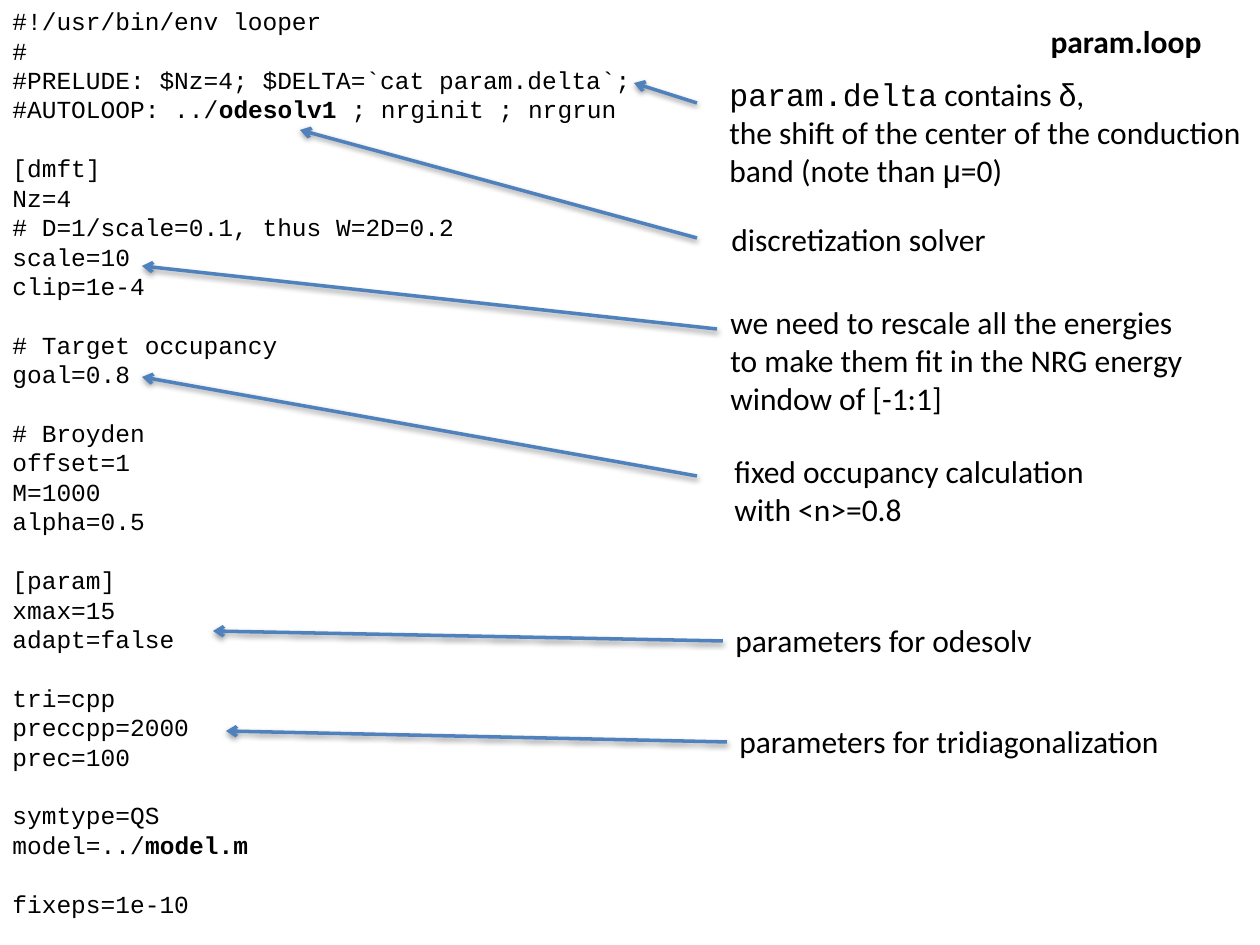
from lxml.etree import SubElement
from pptx import Presentation
from pptx.dml.color import RGBColor
from pptx.enum.shapes import MSO_CONNECTOR as Connector
from pptx.enum.text import MSO_ANCHOR as Anchor, MSO_AUTO_SIZE as AutoSize, PP_ALIGN as Align
from pptx.oxml.ns import qn
from pptx.util import Pt

EMU_PER_PX = 914400 / 126
CODE_FONT, NOTE_FONT, GREEK_FONT = "Courier New", "Calibri", "Arial"
CODE_LINE_PT = 16.8


def px(length):
    return round(length * EMU_PER_PX)


def colour(hex_string):
    return RGBColor.from_string(hex_string)


def write(paragraph, text, font=NOTE_FONT, size=18, bold=False, ink="000000"):
    run = paragraph.add_run()
    run.text = text
    run.font.name, run.font.size, run.font.bold = font, Pt(size), bold
    run.font.color.rgb = colour(ink)


class AnnotatedListing:
    """Style and current slide for code with notes pointing into it."""
    arrow_colour = "4F81BD"
    arrow_width = 2

    def __init__(self, deck):
        self.slide = deck.slides.add_slide(deck.slide_layouts[5])

    def place(self, shape, box):
        shape.left, shape.top, shape.width, shape.height = map(px, box)

    def title(self, text, box):
        heading = self.slide.shapes.title
        self.place(heading, box)
        frame = heading.text_frame
        frame.vertical_anchor = Anchor.TOP
        frame.auto_size = AutoSize.SHAPE_TO_FIT_TEXT
        frame.paragraphs[0].alignment = Align.LEFT
        write(frame.paragraphs[0], text, bold=True)

    def text_box(self, lines, box, wrap=False, **style):
        """Each line is a list of (text, format changes) runs."""
        frame = self.slide.shapes.add_textbox(*map(px, box)).text_frame
        frame.word_wrap = wrap
        frame.auto_size = AutoSize.SHAPE_TO_FIT_TEXT
        for number, runs in enumerate(lines):
            paragraph = frame.add_paragraph() if number else frame.paragraphs[0]
            for text, changes in runs:
                write(paragraph, text, **{**style, **changes})
        return frame

    def code(self, blocks, box):
        """Blocks of lines, set one line apart."""
        lines = [line for block in blocks for line in block]
        frame = self.text_box(lines, box, wrap=True, font=CODE_FONT, size=14)
        first = 0
        for block in blocks[:-1]:
            first += len(block)
            frame.paragraphs[first].space_before = Pt(CODE_LINE_PT)

    def arrow(self, start, end):
        line = self.slide.shapes.add_connector(Connector.STRAIGHT, *map(px, start + end))
        line.line.color.rgb = colour(self.arrow_colour)
        line.line.width = Pt(self.arrow_width)
        properties = line._element.spPr
        SubElement(properties.find(qn("a:ln")), qn("a:tailEnd"), type="arrow")
        effects = SubElement(properties, qn("a:effectLst"))
        shadow = SubElement(effects, qn("a:outerShdw"), blurRad=str(Pt(3.1)),
                            dist=str(Pt(1.6)), dir="5400000", rotWithShape="0")
        black = SubElement(shadow, qn("a:srgbClr"), val="000000")
        SubElement(black, qn("a:alpha"), val="38000")


def plain(*texts):
    return [[(text, {})] for text in texts]


BOLD, GREEK = {"bold": True}, {"font": GREEK_FONT}

PARAM_LOOP = [
    plain("#!/usr/bin/env looper", "#", "#PRELUDE: $Nz=4; $DELTA=`cat param.delta`;")
    + [[("#AUTOLOOP: ../", {}), ("odesolv1 ", BOLD), ("; nrginit ; nrgrun", {})]],
    plain("[dmft]", "Nz=4", "# D=1/scale=0.1, thus W=2D=0.2", "scale=10", "clip=1e-4"),
    plain("# Target occupancy", "goal=0.8"),
    plain("# Broyden", "offset=1", "M=1000", "alpha=0.5"),
    plain("[param]", "xmax=15", "adapt=false"),
    plain("tri=cpp", "preccpp=2000", "prec=100"),
    plain("symtype=QS") + [[("model=../", {}), ("model.m", BOLD)]],
    plain("fixeps=1e-10"),
]

DELTA_NOTE = [
    [("param.delta", {"font": CODE_FONT}), (" contains ", {}), ("δ", GREEK), (",", {})],
    *plain("the shift of the center of the conduction"),
    [("band (note than ", {}), ("μ", GREEK), ("=0)", {})],
]

# note lines, note box, arrow start, arrow end
NOTES = [
    (DELTA_NOTE, (717, 69, 543, 127), (697, 103), (634, 83)),
    (plain("discretization solver"), (719, 214, 284, 50), (697, 238), (300, 130)),
    (plain("we need to rescale all the energies", "to make them fit in the NRG energy",
           "window of [-1:1]"), (718, 297, 484, 127), (717, 329), (142, 266)),
    (plain("fixed occupancy calculation", "with <n>=0.8"),
     (722, 446, 379, 89), (697, 476), (142, 377)),
    (plain("parameters for odesolv"), (723, 615, 328, 50), (723, 641), (213, 631)),
    (plain("parameters for tridiagonalization"), (727, 716, 452, 50), (727, 742), (226, 731)),
]


def main():
    deck = Presentation()
    deck.slide_width, deck.slide_height = px(1260), px(945)
    listing = AnnotatedListing(deck)
    listing.title("param.loop", (1038, 16, 212, 50))
    listing.code(PARAM_LOOP, (0, 0, 799, 963))
    for lines, box, start, end in NOTES:
        listing.text_box(lines, box)
        listing.arrow(start, end)
    deck.save("out.pptx")


if __name__ == "__main__":
    main()
